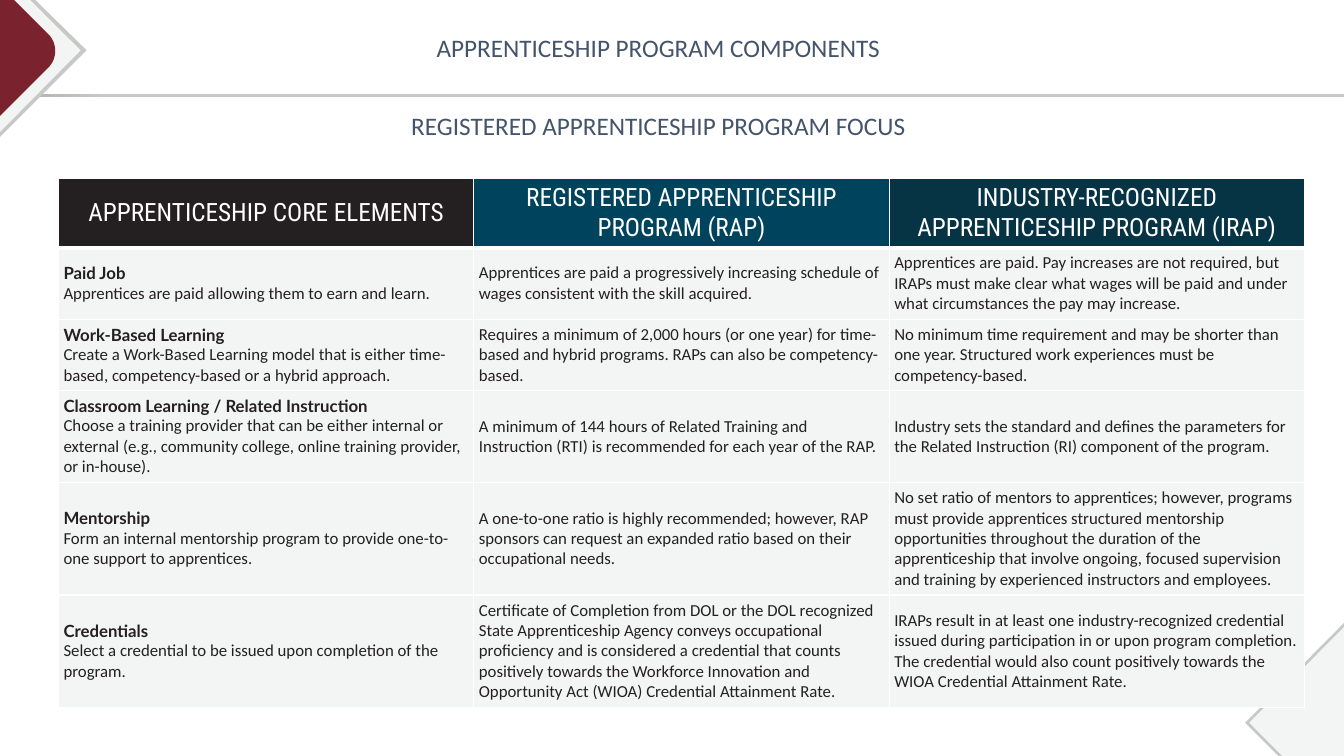
from dataclasses import dataclass

from lxml.etree import SubElement
from pptx import Presentation
from pptx.dml.color import RGBColor
from pptx.enum.shapes import MSO_SHAPE
from pptx.enum.text import MSO_ANCHOR, MSO_AUTO_SIZE, PP_ALIGN
from pptx.oxml.ns import qn
from pptx.slide import Slide
from pptx.table import _Cell
from pptx.text.text import _Paragraph
from pptx.util import Inches, Pt

COLORS = {
    "white": "FFFFFF",
    "black": "242021",
    "teal": "00435D",
    "navy": "073445",
    "heading": "44546A",
    "pale": "F3F4F4",
    "gray": "C8C8C6",
    "dark gray": "ABABA8",
    "maroon": "7A232F",
}
SLIDE_WIDTH, SLIDE_HEIGHT = 13.33, 7.5
MARGIN = 0.58
COLUMN_WIDTH = 4.12
ROW_HEIGHTS = [0.68, 0.71, 0.71, 0.91, 1.11, 1.11]
CELL_INSET = Inches(0.05)

Point = tuple[float, float]


@dataclass
class Ornament:
    points: list[Point]
    color: str


@dataclass
class Header:
    text: str
    color: str


@dataclass
class Element:
    name: str
    summary: str
    registered: str
    industry: str


def bezier(start: Point, control_1: Point, control_2: Point, end: Point, steps: int = 16) -> list[Point]:
    curve = []
    for step in range(steps + 1):
        t = step / steps
        weights = ((1 - t) ** 3, 3 * t * (1 - t) ** 2, 3 * t**2 * (1 - t), t**3)
        anchors = (start, control_1, control_2, end)
        curve.append((
            sum(weight * anchor[0] for weight, anchor in zip(weights, anchors)),
            sum(weight * anchor[1] for weight, anchor in zip(weights, anchors)),
        ))
    return curve


ORNAMENTS = [
    Ornament([(0, 0), (0.35, 0), (0.86, 0.5), (0, 1.36)], "gray"),
    Ornament([(0, 0), (0.3, 0), (0.8, 0.5), (0, 1.31)], "pale"),
    Ornament(
        [(0, 0), (0.14, 0), *bezier((0.48, 0.34), (0.57, 0.43), (0.57, 0.58), (0.48, 0.67)), (0, 1.15)],
        "maroon",
    ),
    Ornament([(13.33, 6.18), (13.33, 7.5), (12.68, 7.5), (12.35, 7.17)], "gray"),
    Ornament([(13.33, 6.22), (13.33, 7.5), (12.72, 7.5), (12.39, 7.17)], "pale"),
]
HEADINGS = ["APPRENTICESHIP PROGRAM COMPONENTS", "REGISTERED APPRENTICESHIP PROGRAM FOCUS"]
HEADERS = [
    Header("APPRENTICESHIP CORE ELEMENTS", "black"),
    Header("REGISTERED APPRENTICESHIP PROGRAM (RAP)", "teal"),
    Header("INDUSTRY-RECOGNIZED APPRENTICESHIP PROGRAM (IRAP)", "navy"),
]
ELEMENTS = [
    Element(
        "Paid Job",
        "Apprentices are paid allowing them to earn and learn.",
        "Apprentices are paid a progressively increasing schedule of wages consistent with the skill acquired.",
        "Apprentices are paid. Pay increases are not required, but IRAPs must make clear what wages will be "
        "paid and under what circumstances the pay may increase.",
    ),
    Element(
        "Work-Based Learning",
        "Create a Work-Based Learning model that is either time-based, competency-based or a hybrid approach.",
        "Requires a minimum of 2,000 hours (or one year) for time-based and hybrid programs. RAPs can also be "
        "competency-based.",
        "No minimum time requirement and may be shorter than one year. Structured work experiences must be "
        "competency-based.",
    ),
    Element(
        "Classroom Learning / Related Instruction",
        "Choose a training provider that can be either internal or external (e.g., community college, online "
        "training provider, or in-house).",
        "A minimum of 144 hours of Related Training and Instruction (RTI) is recommended for each year of the RAP.",
        "Industry sets the standard and defines the parameters for the Related Instruction (RI) component of "
        "the program.",
    ),
    Element(
        "Mentorship",
        "Form an internal mentorship program to provide one-to-one support to apprentices.",
        "A one-to-one ratio is highly recommended; however, RAP sponsors can request an expanded ratio based on "
        "their occupational needs.",
        "No set ratio of mentors to apprentices; however, programs must provide apprentices structured "
        "mentorship opportunities throughout the duration of the apprenticeship that involve ongoing, focused "
        "supervision and training by experienced instructors and employees.",
    ),
    Element(
        "Credentials",
        "Select a credential to be issued upon completion of the program.",
        "Certificate of Completion from DOL or the DOL recognized State Apprenticeship Agency conveys "
        "occupational proficiency and is considered a credential that counts positively towards the Workforce "
        "Innovation and Opportunity Act (WIOA) Credential Attainment Rate.",
        "IRAPs result in at least one industry-recognized credential issued during participation in or upon "
        "program completion. The credential would also count positively towards the WIOA Credential Attainment "
        "Rate.",
    ),
]


def rgb(color: str) -> RGBColor:
    return RGBColor.from_string(COLORS[color])


def style_paragraph(paragraph: _Paragraph, font_name: str, size: int, color: str, bold: bool = False) -> None:
    paragraph.font.name = font_name
    paragraph.font.size = Pt(size)
    paragraph.font.bold = bold
    paragraph.font.color.rgb = rgb(color)


def add_divider(slide: Slide) -> None:
    divider = slide.shapes.add_shape(
        MSO_SHAPE.RECTANGLE, 0, Inches(0.93), Inches(SLIDE_WIDTH), Inches(0.03)
    )
    divider.shadow.inherit = False
    divider.line.fill.background()
    divider.fill.gradient()
    divider.fill.gradient_angle = 0
    for stop, color, position in zip(divider.fill.gradient_stops, ("dark gray", "gray"), (0, 0.08)):
        stop.color.rgb = rgb(color)
        stop.position = position


def add_ornament(slide: Slide, ornament: Ornament) -> None:
    corners = [(Inches(x), Inches(y)) for x, y in ornament.points]
    builder = slide.shapes.build_freeform(*corners[0])
    builder.add_line_segments(corners[1:], close=True)
    shape = builder.convert_to_shape()
    shape.shadow.inherit = False
    shape.fill.solid()
    shape.fill.fore_color.rgb = rgb(ornament.color)
    shape.line.fill.background()


def format_cell(cell: _Cell, color: str, bottom_width: int = 1) -> None:
    cell.vertical_anchor = MSO_ANCHOR.MIDDLE
    cell.margin_left = cell.margin_right = cell.margin_top = cell.margin_bottom = CELL_INSET
    properties = cell._tc.get_or_add_tcPr()
    for side, width in (("lnL", 1), ("lnR", 1), ("lnT", 1), ("lnB", bottom_width)):
        border = SubElement(properties, qn(f"a:{side}"), w=str(Pt(width)))
        SubElement(SubElement(border, qn("a:solidFill")), qn("a:srgbClr"), val=COLORS["white"])
    cell.fill.solid()
    cell.fill.fore_color.rgb = rgb(color)


def add_comparison(slide: Slide) -> None:
    table = slide.shapes.add_table(
        len(ROW_HEIGHTS), len(HEADERS), Inches(MARGIN), Inches(1.77),
        Inches(COLUMN_WIDTH * len(HEADERS)), Inches(sum(ROW_HEIGHTS)),
    ).table
    for row, height in zip(table.rows, ROW_HEIGHTS):
        row.height = Inches(height)
    for column, header in enumerate(HEADERS):
        table.columns[column].width = Inches(COLUMN_WIDTH)
        cell = table.cell(0, column)
        format_cell(cell, header.color, bottom_width=3)
        cell.text = header.text
        paragraph = cell.text_frame.paragraphs[0]
        paragraph.alignment = PP_ALIGN.CENTER
        style_paragraph(paragraph, "Roboto Condensed", 18, "white")
    for row, element in enumerate(ELEMENTS, start=1):
        texts = (f"{element.name}\n{element.summary}", element.registered, element.industry)
        for column, text in enumerate(texts):
            cell = table.cell(row, column)
            format_cell(cell, "pale")
            cell.text = text
            for paragraph in cell.text_frame.paragraphs:
                is_name = paragraph.text == element.name
                style_paragraph(paragraph, "Lato" if is_name else "Calibri", 12, "black", bold=is_name)


def format_title(slide: Slide) -> None:
    title = slide.shapes.title
    title.left, title.top = Inches(MARGIN), Inches(0.27)
    title.width, title.height = Inches(11.9), Inches(1.95)
    frame = title.text_frame
    frame.text = "\n".join(HEADINGS)
    frame.word_wrap = True
    frame.auto_size = MSO_AUTO_SIZE.NONE
    frame.vertical_anchor = MSO_ANCHOR.TOP
    for paragraph, space_before in zip(frame.paragraphs, (0, 28)):
        paragraph.alignment = PP_ALIGN.CENTER
        paragraph.line_spacing = 1.0
        paragraph.space_before = Pt(space_before)
        paragraph.space_after = Pt(6)
        style_paragraph(paragraph, "Calibri", 18, "heading")


def main() -> None:
    presentation = Presentation()
    presentation.slide_width = Inches(SLIDE_WIDTH)
    presentation.slide_height = Inches(SLIDE_HEIGHT)
    slide = presentation.slides.add_slide(presentation.slide_layouts[5])
    add_divider(slide)
    for ornament in ORNAMENTS:
        add_ornament(slide, ornament)
    add_comparison(slide)
    format_title(slide)
    presentation.save("out.pptx")


if __name__ == "__main__":
    main()
